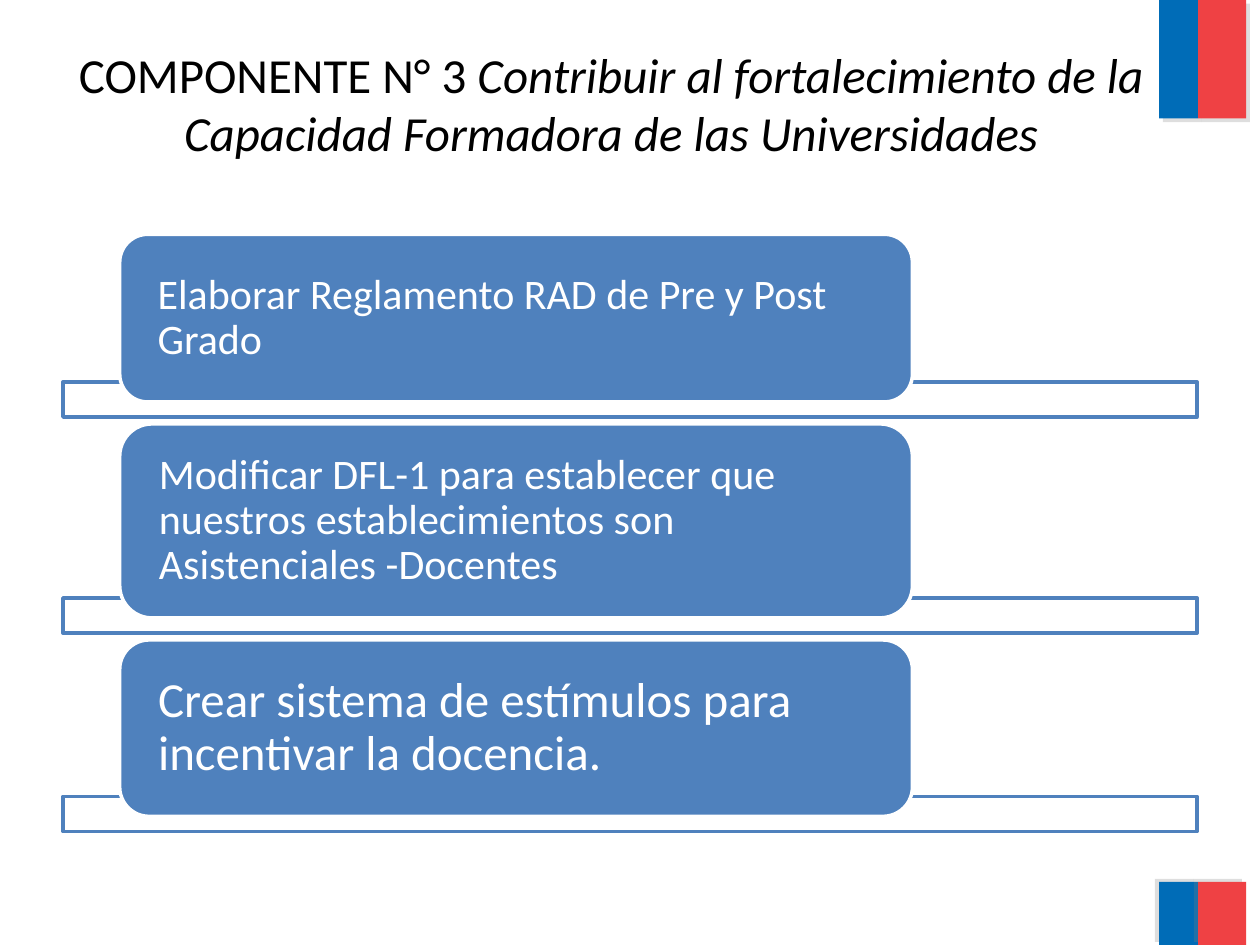
from lxml.etree import SubElement
from pptx import Presentation
from pptx.dml.color import RGBColor
from pptx.enum.shapes import MSO_SHAPE as Shape
from pptx.enum.text import MSO_ANCHOR as Anchor, PP_ALIGN as Align
from pptx.oxml.ns import qn
from pptx.util import Pt

BLACK = RGBColor(0x00, 0x00, 0x00)
WHITE = RGBColor(0xFF, 0xFF, 0xFF)
STEEL = RGBColor(0x4F, 0x81, 0xBD)
FLAG_BLUE = RGBColor(0x00, 0x6C, 0xB7)
FLAG_RED = RGBColor(0xEF, 0x41, 0x44)
SHADOW_GREY = RGBColor(0x80, 0x80, 0x80)

FONT = "Calibri"
BAR_HEIGHT = 20.16
BAR_OVERLAP = 11.5
CARD_GAP = 3.9

# Card height, text size, text
ACTIONS = [
    (95.8, 24, "Elaborar Reglamento RAD de Pre y Post Grado"),
    (110.9, 24, "Modificar DFL-1 para establecer que nuestros "
                "establecimientos son Asistenciales -Docentes"),
    (100.8, 28, "Crear sistema de estímulos para incentivar la docencia."),
]


def set_all(target, values):
    for name, value in values.items():
        setattr(target, name, value)


def add_alpha(color_parent, percent):
    color = color_parent.find(".//" + qn("a:srgbClr"))
    SubElement(color, qn("a:alpha"), val=str(percent * 1000))


def add_block(slide, kind, box, fill, line=None):
    block = slide.shapes.add_shape(kind, *map(Pt, box))
    block.shadow.inherit = False
    block.fill.solid()
    block.fill.fore_color.rgb = fill
    if line is None:
        block.line.fill.background()
    else:
        block.line.color.rgb = line
        block.line.width = Pt(2)
    return block


def add_run(paragraph, text, size, color, italic=False):
    run = paragraph.add_run()
    run.text = text
    set_all(run.font, {"name": FONT, "size": Pt(size), "italic": italic})
    run.font.color.rgb = color


def add_flag(slide, top, height, shadow_angle):
    for left, width, color in ((662.4, 22.3, FLAG_BLUE), (684.7, 27.4, FLAG_RED)):
        stripe = add_block(slide, Shape.RECTANGLE, (left, top, width, height), color)
        # Hard grey shadow offset by 3 pt
        effects = stripe.element.spPr.find(qn("a:effectLst"))
        shadow = SubElement(effects, qn("a:outerShdw"), blurRad="0",
                            dist=str(Pt(3)), dir=str(shadow_angle * 60000),
                            algn="ctr", rotWithShape="0")
        SubElement(shadow, qn("a:srgbClr"), val=str(SHADOW_GREY))
        add_alpha(shadow, 25)


def add_title(slide):
    title = slide.shapes.add_textbox(Pt(14.4), Pt(21.6), Pt(669.6), Pt(90))
    title.text_frame.word_wrap = True
    heading = title.text_frame.paragraphs[0]
    heading.alignment = Align.CENTER
    add_run(heading, "COMPONENTE N° 3", 28, BLACK)
    add_run(heading, " Contribuir al fortalecimiento de la Capacidad "
                     "Formadora de las Universidades", 28, BLACK, italic=True)


def add_action(slide, top, height, size, text):
    """Draw a bar with its card on top and return the bar's bottom edge."""
    bar_top = top + height - BAR_OVERLAP
    bar = add_block(slide, Shape.RECTANGLE, (36, bar_top, 648, BAR_HEIGHT), WHITE, STEEL)
    add_alpha(bar.element.spPr.find(qn("a:solidFill")), 90)

    card = add_block(slide, Shape.ROUNDED_RECTANGLE, (68.4, top, 453, height), STEEL, WHITE)
    set_all(card.text_frame, {
        "word_wrap": True, "vertical_anchor": Anchor.MIDDLE,
        "margin_left": Pt(17), "margin_right": Pt(17),
        "margin_top": 0, "margin_bottom": 0,
    })
    label = card.text_frame.paragraphs[0]
    set_all(label, {"alignment": Align.LEFT, "line_spacing": 0.9})
    add_run(label, text, size, WHITE)
    return bar_top + BAR_HEIGHT


def main():
    deck = Presentation()
    set_all(deck, {"slide_width": Pt(720), "slide_height": Pt(540)})
    slide = deck.slides.add_slide(deck.slide_layouts[6])

    # Corner flags
    add_flag(slide, 0, 67.7, 45)
    add_flag(slide, 504, 36, 215)

    add_title(slide)

    # Stacked actions
    top = 133.9
    for height, size, text in ACTIONS:
        top = add_action(slide, top, height, size, text) + CARD_GAP

    deck.save("out.pptx")


if __name__ == "__main__":
    main()
